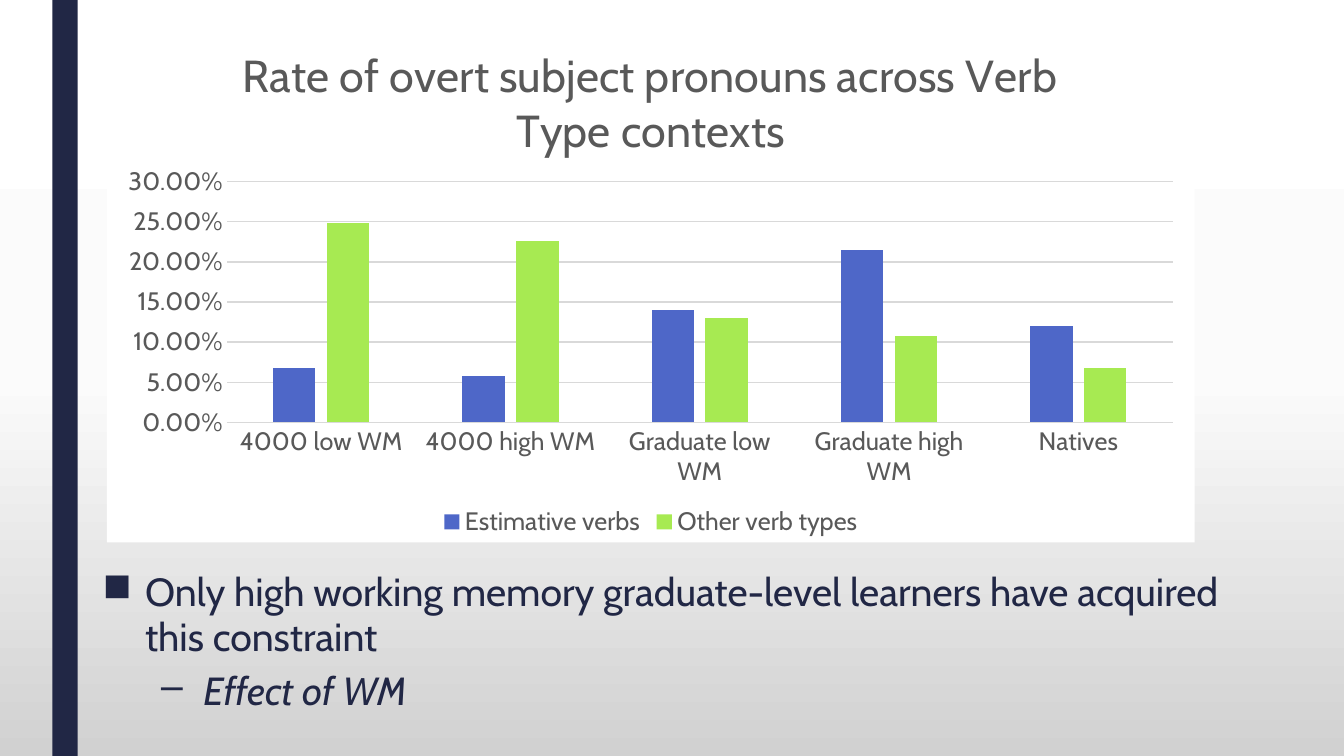
from lxml import etree
from pptx import Presentation
from pptx.chart.data import CategoryChartData
from pptx.dml.color import RGBColor
from pptx.enum.chart import XL_CHART_TYPE, XL_LEGEND_POSITION, XL_TICK_MARK
from pptx.enum.shapes import MSO_SHAPE
from pptx.oxml import parse_xml
from pptx.oxml.ns import nsdecls, qn
from pptx.util import Inches, Pt

CLUSTERED = XL_CHART_TYPE.COLUMN_CLUSTERED
LEGEND_BOTTOM = XL_LEGEND_POSITION.BOTTOM
NO_TICK = XL_TICK_MARK.NONE
RECTANGLE = MSO_SHAPE.RECTANGLE

FONT = "Cabin"
COLORS = {
    "navy": "212745",
    "blue": "4E67C8",
    "green": "A7EA52",
    "gray": "595959",
    "grid": "D9D9D9",
    "white": "FFFFFF",
}
BACKGROUND_STOPS = [(0, "FFFFFF"), (50, "FBFBFB"), (100, "D1D1D1")]


def color(name):
    return RGBColor.from_string(COLORS[name])


def set_font(font, size, color_name):
    font.name = FONT
    font.size = Pt(size)
    font.bold = False
    font.color.rgb = color(color_name)


presentation = Presentation()
presentation.slide_width = Inches(13.33)
presentation.slide_height = Inches(7.5)
slide = presentation.slides.add_slide(presentation.slide_layouts[6])

# Background gradient, top to bottom
fill = slide.background.fill
fill.gradient()
fill.gradient_angle = 270
stop_list = slide.background._cSld.find(".//" + qn("a:gsLst"))
for stop in list(stop_list):
    stop_list.remove(stop)
for percent, hex_color in BACKGROUND_STOPS:
    stop = etree.SubElement(stop_list, qn("a:gs"), pos=str(percent * 1000))
    etree.SubElement(stop, qn("a:srgbClr"), val=hex_color)

# Side bar
bar = slide.shapes.add_shape(RECTANGLE, Inches(0.52), 0, Inches(0.25), Inches(7.5))
bar.shadow.inherit = False
bar.fill.solid()
bar.fill.fore_color.rgb = color("navy")
bar.line.fill.background()

# Chart data
chart_data = CategoryChartData(number_format="0.00%")
chart_data.categories = ["4000 low WM", "4000 high WM", "Graduate low WM",
                         "Graduate high WM", "Natives"]
chart_data.add_series("Estimative verbs", [0.068, 0.057, 0.14, 0.215, 0.12])
chart_data.add_series("Other verb types", [0.249, 0.226, 0.13, 0.107, 0.068])
chart = slide.shapes.add_chart(CLUSTERED, Inches(1.06), Inches(0.2),
                               Inches(10.79), Inches(5.18), chart_data).chart
set_font(chart.font, 18, "gray")

# Chart title
chart.has_title = True
title = chart.chart_title.text_frame
title.text = "Rate of overt subject pronouns across Verb Type contexts"
set_font(title.paragraphs[0].font, 32, "gray")

# Legend
chart.has_legend = True
chart.legend.position = LEGEND_BOTTOM
chart.legend.include_in_layout = False
set_font(chart.legend.font, 18, "gray")

# Columns
plot = chart.plots[0]
plot.gap_width = 219
plot.overlap = -27
plot.vary_by_categories = False
for series, name in zip(plot.series, ["blue", "green"]):
    series.format.fill.solid()
    series.format.fill.fore_color.rgb = color(name)

# Axes
for axis in (chart.category_axis, chart.value_axis):
    axis.major_tick_mark = NO_TICK
    axis.minor_tick_mark = NO_TICK
    set_font(axis.tick_labels.font, 18, "gray")
value_axis = chart.value_axis
value_axis.minimum_scale = 0
value_axis.maximum_scale = 0.3
value_axis.major_unit = 0.05
value_axis.tick_labels.number_format = "0.00%"
value_axis.tick_labels.number_format_is_linked = False
value_axis.format.line.fill.background()
for line in (chart.category_axis.format.line, value_axis.major_gridlines.format.line):
    line.color.rgb = color("grid")
    line.width = Pt(0.75)

# Plot area position, as shares of the chart
plot_area = chart._chartSpace.chart.plotArea
for layout in plot_area.findall(qn("c:layout")):
    plot_area.remove(layout)
plot_area.insert(0, parse_xml(
    f'<c:layout {nsdecls("c")}><c:manualLayout><c:layoutTarget val="inner"/>'
    '<c:xMode val="edge"/><c:yMode val="edge"/><c:x val="0.11"/><c:y val="0.31"/>'
    '<c:w val="0.87"/><c:h val="0.46"/></c:manualLayout></c:layout>'))

# White chart area
chart._chartSpace.chart.addnext(parse_xml(
    f'<c:spPr {nsdecls("c", "a")}><a:solidFill><a:srgbClr val="{COLORS["white"]}"/>'
    '</a:solidFill><a:ln><a:noFill/></a:ln></c:spPr>'))

# Findings: text, level, left margin, space before, bullet, italic
findings = [
    ("Only high working memory graduate-level learners have acquired this constraint",
     0, 0.42, 10, "■", False),
    ("Effect of WM", 1, 1, 5, "–", True),
]
text_box = slide.shapes.add_textbox(Inches(0.92), Inches(5.62), Inches(11.5), Inches(1.68))
text_frame = text_box.text_frame
text_frame.word_wrap = True
for index, (text, level, margin, before, bullet, italic) in enumerate(findings):
    paragraph = text_frame.add_paragraph() if index else text_frame.paragraphs[0]
    paragraph.text = text
    paragraph.level = level
    paragraph.line_spacing = 0.94
    paragraph.space_before = Pt(before)
    paragraph.space_after = Pt(2)
    set_font(paragraph.font, 28, "navy")
    paragraph.font.italic = italic
    properties = paragraph._p.get_or_add_pPr()
    properties.set("marL", str(Inches(margin)))
    properties.set("indent", str(Inches(-0.42)))
    bullet_mark = etree.Element(qn("a:buChar"), char=bullet)
    properties.find(qn("a:defRPr")).addprevious(bullet_mark)

presentation.save("out.pptx")
